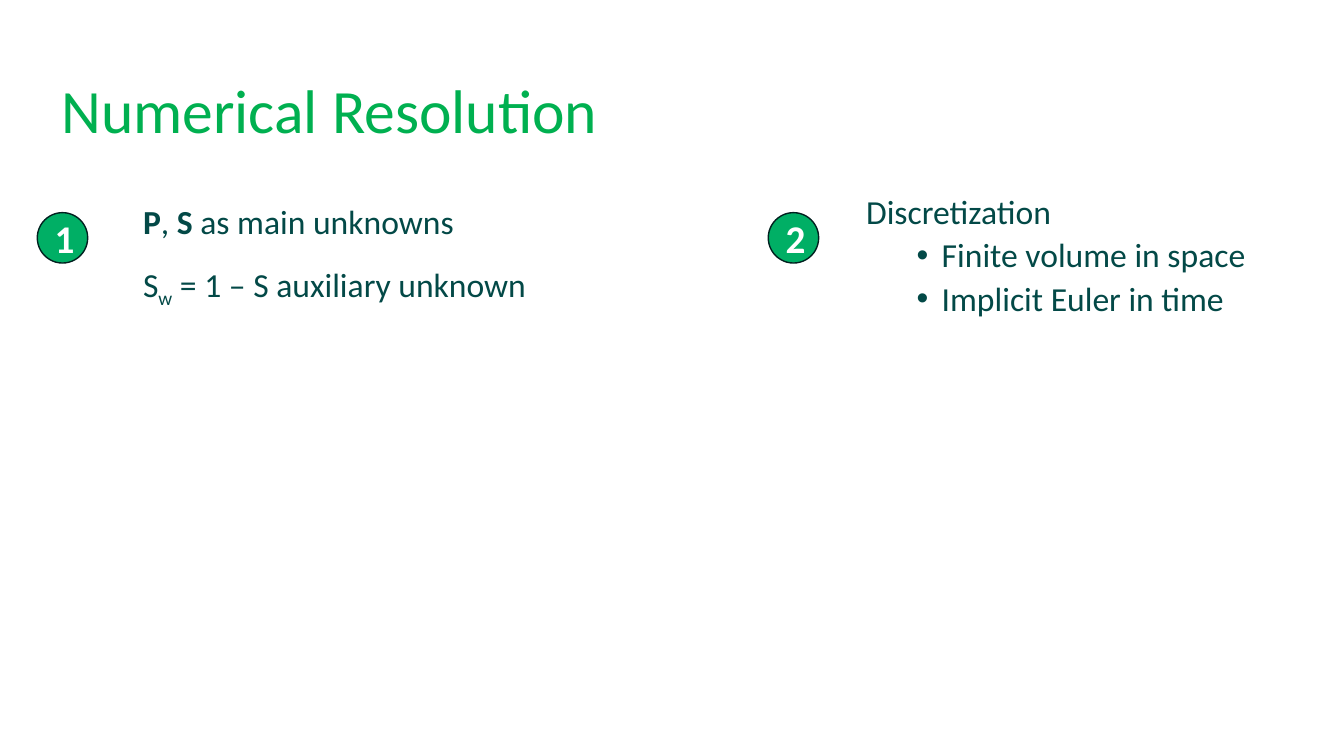
from lxml import etree
from pptx import Presentation
from pptx.dml.color import RGBColor
from pptx.enum import shapes, text
from pptx.oxml import ns
from pptx.util import Inches, Pt

COLORS = {
    "title": "00B050",
    "body": "034947",
    "badge": "00AF65",
    "outline": "01201F",
    "number": "FFFFFF",
}
FORMATS = {
    "title": {"name": "Calibri", "size": Pt(44), "bold": False},
    "body": {"name": "Calibri", "size": Pt(24), "bold": False},
    "number": {"name": "Calibri", "size": Pt(28), "bold": True},
}
UNKNOWNS = [
    [("P", "bold"), (", ", ""), ("S", "bold"), (" as main unknowns", "")],
    [("S", ""), ("w", "subscript"), (" = 1 – S auxiliary unknown", "")],
]
DISCRETIZATION = ["Discretization", "Finite volume in space", "Implicit Euler in time"]
BADGE_SIZE = 0.5


def set_values(target, values):
    """Set each attribute of the target from a dict."""
    for name, value in values.items():
        setattr(target, name, value)


def place(shape, box):
    """Move and size a shape to a box given in inches."""
    names = ("left", "top", "width", "height")
    set_values(shape, dict(zip(names, map(Inches, box))))


def add_run(paragraph, wording, style, variant=""):
    """Add a formatted run, optionally bold or subscript."""
    run = paragraph.add_run()
    run.text = wording
    set_values(run.font, FORMATS[style])
    run.font.color.rgb = RGBColor.from_string(COLORS[style])
    if variant == "bold":
        run.font.bold = True
    elif variant == "subscript":
        run.font._element.set("baseline", "-25000")


def get_paragraph(frame, index):
    """Return the first paragraph of a frame or append a new one."""
    return frame.add_paragraph() if index else frame.paragraphs[0]


def set_bullet(paragraph, character, margin, indent):
    """Give a paragraph a bullet, or none, with its indents."""
    properties = paragraph._p.get_or_add_pPr()
    properties.set("marL", str(Inches(margin)))
    properties.set("indent", str(Inches(indent)))
    if character:
        etree.SubElement(properties, ns.qn("a:buFont"), typeface="Arial")
        etree.SubElement(properties, ns.qn("a:buChar"), char=character)
    else:
        etree.SubElement(properties, ns.qn("a:buNone"))


def add_title(slide, box):
    """Fill the title placeholder."""
    title = slide.shapes.title
    place(title, box)
    set_values(title.text_frame, {
        "vertical_anchor": text.MSO_ANCHOR.MIDDLE,
        "auto_size": text.MSO_AUTO_SIZE.NONE,
    })
    paragraph = title.text_frame.paragraphs[0]
    set_values(paragraph, {"alignment": text.PP_ALIGN.LEFT, "line_spacing": 0.9})
    add_run(paragraph, "Numerical Resolution", "title")


def add_badge(slide, left, top, number):
    """Draw a numbered circle."""
    badge = slide.shapes.add_shape(
        shapes.MSO_SHAPE.FLOWCHART_CONNECTOR,
        *map(Inches, (left, top, BADGE_SIZE, BADGE_SIZE)))
    badge.shadow.inherit = False
    badge.fill.solid()
    badge.fill.fore_color.rgb = RGBColor.from_string(COLORS["badge"])
    badge.line.color.rgb = RGBColor.from_string(COLORS["outline"])
    badge.line.width = Pt(1)
    badge.text_frame.vertical_anchor = text.MSO_ANCHOR.MIDDLE
    paragraph = badge.text_frame.paragraphs[0]
    paragraph.alignment = text.PP_ALIGN.CENTER
    add_run(paragraph, str(number), "number")


def add_unknowns(slide, box):
    """Place the first step: its badge and the unknowns."""
    left, top, width, height = box
    add_badge(slide, left, top + 0.37, 1)
    area = (left + 0.95, top, width - 0.95, height)
    frame = slide.shapes.add_textbox(*map(Inches, area)).text_frame
    frame.word_wrap = True
    for index, parts in enumerate(UNKNOWNS):
        paragraph = get_paragraph(frame, index)
        paragraph.line_spacing = 1.5
        for wording, variant in parts:
            add_run(paragraph, wording, "body", variant)


def add_discretization(slide, box):
    """Place the second step: its badge and the bulleted list."""
    left, top, width, height = box
    body = slide.placeholders[1]
    place(body, (left + 0.87, top, width - 0.87, height))
    body.text_frame.auto_size = text.MSO_AUTO_SIZE.NONE
    for index, wording in enumerate(DISCRETIZATION):
        paragraph = get_paragraph(body.text_frame, index)
        set_values(paragraph, {
            "level": 1 if index else 0,
            "line_spacing": 0.9,
            "space_before": Pt(5 if index else 0),
        })
        set_bullet(paragraph, *(("•", 0.75, -0.25) if index else ("", 0, 0)))
        add_run(paragraph, wording, "body")
    add_badge(slide, left, top + 0.22, 2)


def main():
    """Build and save the slide."""
    presentation = Presentation()
    set_values(presentation, {
        "slide_width": Inches(13.33), "slide_height": Inches(7.5)})
    slide = presentation.slides.add_slide(presentation.slide_layouts[1])
    add_title(slide, (0.51, 0.4, 11.91, 1.45))
    add_unknowns(slide, (0.37, 1.74, 5.54, 1.25))
    add_discretization(slide, (7.62, 1.89, 5.21, 1.69))
    presentation.save("out.pptx")


if __name__ == "__main__":
    main()
